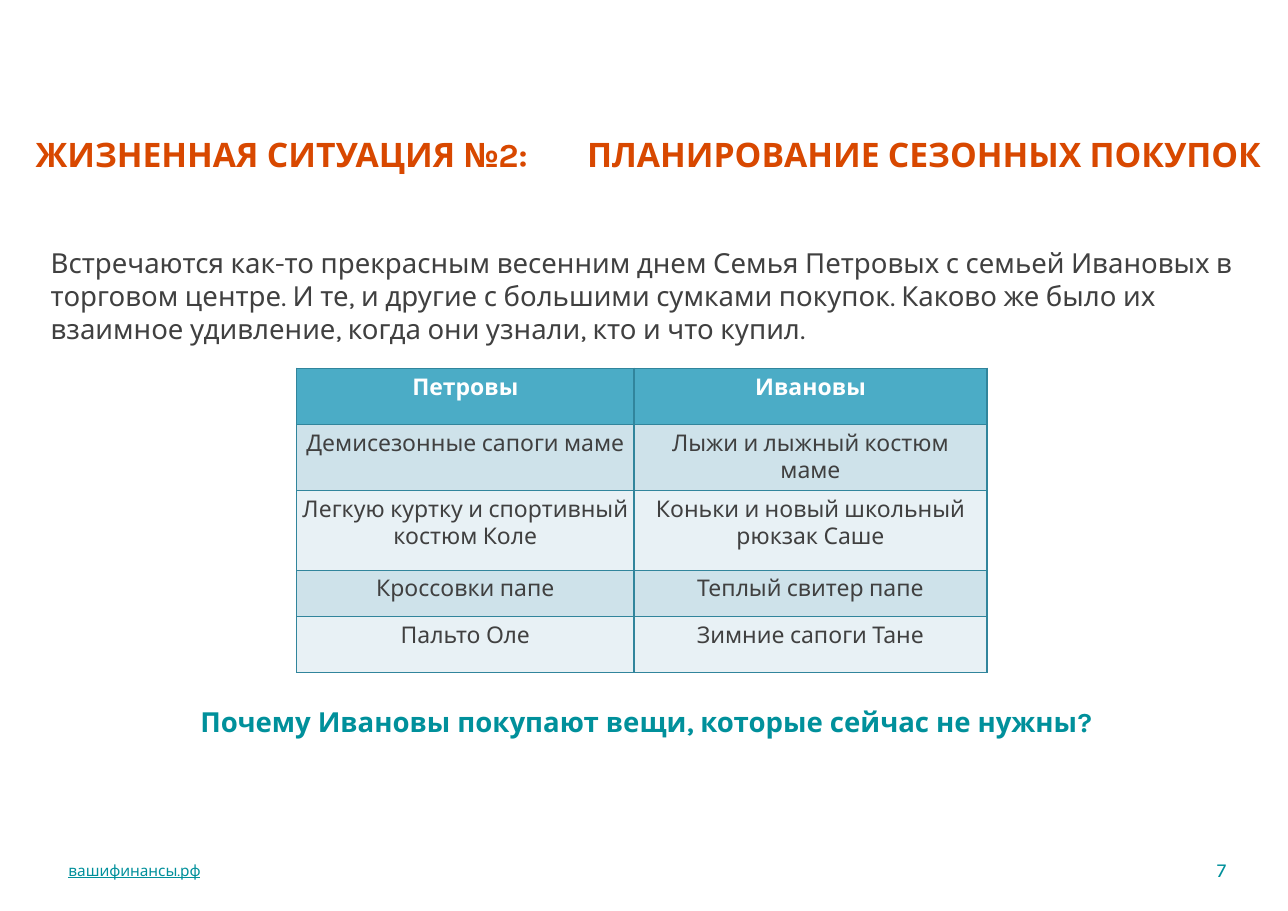
import pptx
import pptx.dml.color
import pptx.enum.text
import pptx.oxml
import pptx.oxml.ns
import pptx.util
from pptx.util import Inches

FONT = "Karla"
TEAL = "00909B"
ORANGE = "D84800"
GRAY = "404040"
BORDER = "31859C"
HEADER_FILL = "4BACC6"
BAND_FILLS = ["CEE2EA", "E8F1F5"]
MARGIN = Inches(0.05)
ALIGN = pptx.enum.text.PP_ALIGN
ANCHOR = pptx.enum.text.MSO_ANCHOR

COLUMN_WIDTHS = [3.06, 3.2]
ROW_HEIGHTS = [0.51, 0.59, 0.72, 0.42, 0.51]
PURCHASES = [
    ("Петровы", "Ивановы"),
    ("Демисезонные сапоги маме", "Лыжи и лыжный костюм маме"),
    ("Легкую куртку и спортивный костюм Коле", "Коньки и новый школьный рюкзак Саше"),
    ("Кроссовки папе", "Теплый свитер папе"),
    ("Пальто Оле", "Зимние сапоги Тане"),
]


def rgb(value):
    return pptx.dml.color.RGBColor.from_string(value)


def write(para, text, size=18, color=GRAY, bold=False, underline=False, align=ALIGN.LEFT):
    para.alignment = align
    span = para.add_run()
    span.text = text
    span.font.name = FONT
    span.font.size = pptx.util.Pt(size)
    span.font.color.rgb = rgb(color)
    span.font.bold = bold
    span.font.underline = underline


def set_margins(target):
    target.margin_left = target.margin_right = MARGIN
    target.margin_top = target.margin_bottom = MARGIN


def add_text(page, text, left, top, width, height, anchor=ANCHOR.TOP, wrap=True, **style):
    box = page.shapes.add_textbox(Inches(left), Inches(top), Inches(width), Inches(height))
    frame = box.text_frame
    set_margins(frame)
    frame.word_wrap = wrap
    frame.vertical_anchor = anchor
    write(frame.paragraphs[0], text, **style)


def add_borders(cell):
    properties = cell._tc.get_or_add_tcPr()
    for index, side in enumerate(["lnL", "lnR", "lnT", "lnB"]):
        line = pptx.oxml.parse_xml(
            f'<a:{side} {pptx.oxml.ns.nsdecls("a")} w="{pptx.util.Pt(1)}"><a:solidFill>'
            f'<a:srgbClr val="{BORDER}"/></a:solidFill></a:{side}>'
        )
        properties.insert(index, line)


def fill_cell(cell, text, fill, **style):
    set_margins(cell)
    cell.fill.solid()
    cell.fill.fore_color.rgb = rgb(fill)
    add_borders(cell)
    write(cell.text_frame.paragraphs[0], text, size=15, align=ALIGN.CENTER, **style)


def add_purchases(page, left, top):
    table = page.shapes.add_table(
        len(PURCHASES), len(COLUMN_WIDTHS), Inches(left), Inches(top),
        Inches(sum(COLUMN_WIDTHS)), Inches(sum(ROW_HEIGHTS)),
    ).table
    for column, width in zip(table.columns, COLUMN_WIDTHS):
        column.width = Inches(width)
    for index, (row, height, texts) in enumerate(zip(table.rows, ROW_HEIGHTS, PURCHASES)):
        row.height = Inches(height)
        header = index == 0
        fill = HEADER_FILL if header else BAND_FILLS[(index - 1) % 2]
        for cell, text in zip(row.cells, texts):
            fill_cell(cell, text, fill, color="FFFFFF" if header else GRAY, bold=header)


def main():
    deck = pptx.Presentation()
    deck.slide_width = Inches(11.68)
    deck.slide_height = Inches(8.26)
    page = deck.slides.add_slide(deck.slide_layouts[6])
    add_text(page, "ЖИЗНЕННАЯ СИТУАЦИЯ №2: \tПЛАНИРОВАНИЕ СЕЗОННЫХ ПОКУПОК",
             0.25, 1.16, 11.26, 0.99, size=22, color=ORANGE, bold=True, align=ALIGN.CENTER)
    add_text(page, "Встречаются как-то прекрасным весенним днем Семья Петровых с семьей "
             "Ивановых в торговом центре. И те, и другие с большими сумками покупок. "
             "Каково же было их взаимное удивление, когда они узнали, кто и что купил.",
             0.41, 2.18, 10.9, 1.05)
    add_purchases(page, 2.69, 3.34)
    add_text(page, "Почему Ивановы покупают вещи, которые сейчас не нужны?",
             0.41, 6.34, 10.9, 0.42, color=TEAL, bold=True, align=ALIGN.CENTER)
    add_text(page, "вашифинансы.рф", 0.57, 7.75, 3.97, 0.28, anchor=ANCHOR.MIDDLE,
             size=10, color=TEAL, underline=True)
    add_text(page, "7", 10.95, 7.72, 0.22, 0.33, anchor=ANCHOR.MIDDLE, wrap=False,
             size=13, color=TEAL, align=ALIGN.RIGHT)
    deck.save("out.pptx")


if __name__ == "__main__":
    main()
